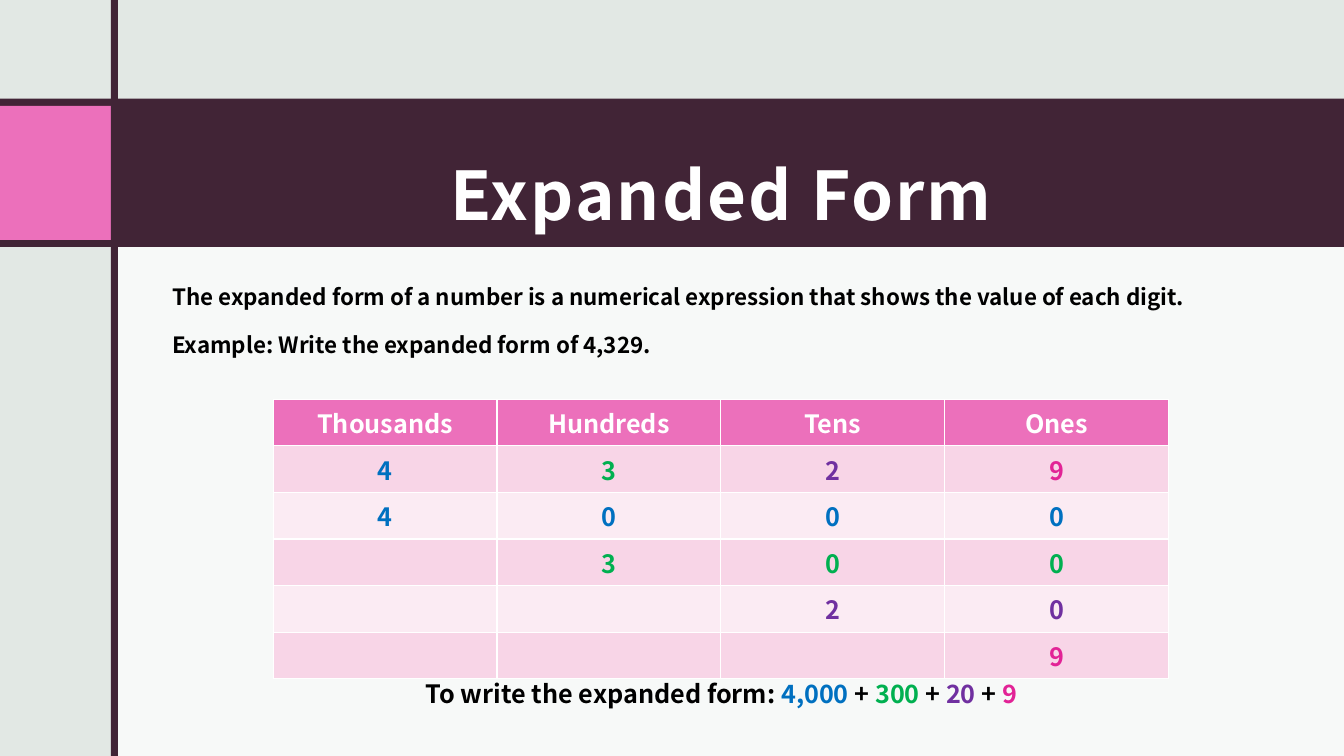
from pptx import Presentation
from pptx.dml.color import RGBColor
from pptx.enum.shapes import MSO_SHAPE
from pptx.enum.text import MSO_ANCHOR, MSO_AUTO_SIZE, PP_ALIGN
from pptx.oxml.ns import qn
from pptx.util import Inches, Pt
from lxml.etree import SubElement

FONT = "Noto Sans CJK JP"
WHITE = RGBColor(0xFF, 0xFF, 0xFF)
BLACK = RGBColor(0, 0, 0)
SAGE = RGBColor(0xE2, 0xE8, 0xE4)
PLUM = RGBColor(0x41, 0x24, 0x36)
PINK = RGBColor(0xEC, 0x70, 0xBB)
BANDS = [RGBColor(0xF8, 0xD5, 0xE7), RGBColor(0xFB, 0xEB, 0xF3)]
BLUE = RGBColor(0x00, 0x70, 0xC0)
GREEN = RGBColor(0x00, 0xB0, 0x50)
PURPLE = RGBColor(0x70, 0x30, 0xA0)
ROSE = RGBColor(0xE2, 0x23, 0x96)

# Content
TITLE = "Expanded Form"
INTRO = [
    "The expanded form of a number is a numerical expression that shows the value of each digit.",
    "Example: Write the expanded form of 4,329.",
]
PLACES = ["Thousands", "Hundreds", "Tens", "Ones"]
DIGITS = "4329"
HUES = [BLUE, GREEN, PURPLE, ROSE]
LEAD = "To write the expanded form: "
TERMS = ["4,000", "300", "20", "9"]

deck = Presentation()
deck.slide_width, deck.slide_height = Inches(13.33), Inches(7.5)
slide = deck.slides.add_slide(deck.slide_layouts[5])
slide.background.fill.solid()
slide.background.fill.fore_color.rgb = SAGE


def place(*box):
    return [Inches(n) for n in box]


def block(box, color):
    shape = slide.shapes.add_shape(MSO_SHAPE.RECTANGLE, *place(*box))
    shape.shadow.inherit = False
    shape.fill.solid()
    shape.fill.fore_color.rgb = color
    shape.line.fill.background()
    return shape


def style(font, size, color):
    font.name, font.size, font.bold = FONT, Pt(size), True
    font.color.rgb = color


def textbox(*box):
    frame = slide.shapes.add_textbox(*place(*box)).text_frame
    frame.word_wrap = True
    return frame


# Panel, title band, pink square and vertical bar
panel = block((1.14, 2.33, 12.19, 5.17), WHITE)
tint = panel.fill._xPr.find(qn("a:solidFill"))[0]
SubElement(tint, qn("a:alpha"), val="75000")
band = block((0, 0.98, 13.33, 1.47), PLUM)
block((0, 1.05, 1.1, 1.33), PINK)
block((1.1, 0, 0.07, 7.5), PLUM)

# Title, placed above the band
title = slide.shapes.title
title.left, title.top, title.width, title.height = place(1.68, 0.98, 10.95, 1.47)
band._element.addnext(title._element)
frame = title.text_frame
frame.text = TITLE
frame.auto_size = MSO_AUTO_SIZE.NONE
frame.vertical_anchor = MSO_ANCHOR.MIDDLE
frame.margin_left = frame.margin_right = frame.margin_top = Inches(0.12)
frame.margin_bottom = Inches(0.1)
para = frame.paragraphs[0]
para.alignment, para.line_spacing = PP_ALIGN.CENTER, 1.5
style(para.font, 48, WHITE)
para.runs[0].font._element.set("spc", "150")

# Place value table: all digits, then each digit followed by its zeros
rows = [list(zip(DIGITS, HUES))]
for i, (digit, hue) in enumerate(zip(DIGITS, HUES)):
    zeros = len(DIGITS) - 1 - i
    rows.append([("", hue)] * i + [(digit, hue)] + [("0", hue)] * zeros)
grid = [[(name, WHITE) for name in PLACES]] + rows

table = slide.shapes.add_table(
    len(grid), len(PLACES), *place(2.71, 3.96, 8.88, 2.43)).table
for r, row in enumerate(grid):
    for c, (text, hue) in enumerate(row):
        cell = table.cell(r, c)
        cell.fill.solid()
        cell.fill.fore_color.rgb = BANDS[(r - 1) % 2] if r else PINK
        cell.text = text
        para = cell.text_frame.paragraphs[0]
        para.alignment = PP_ALIGN.CENTER
        style(para.font, 18, hue)

# Definition and example
frame = textbox(1.61, 2.76, 11.72, 0.91)
frame.text = "\n".join(INTRO)
for para in frame.paragraphs:
    style(para.font, 16, BLACK)
frame.paragraphs[1].space_before = Pt(15.4)

# Coloured sum
para = textbox(1.9, 6.68, 10.51, 0.4).paragraphs[0]
para.alignment = PP_ALIGN.CENTER
for i, (term, hue) in enumerate(zip(TERMS, HUES)):
    for text, color in ((" + " if i else LEAD, BLACK), (term, hue)):
        run = para.add_run()
        run.text = text
        style(run.font, 18, color)

deck.save("out.pptx")
